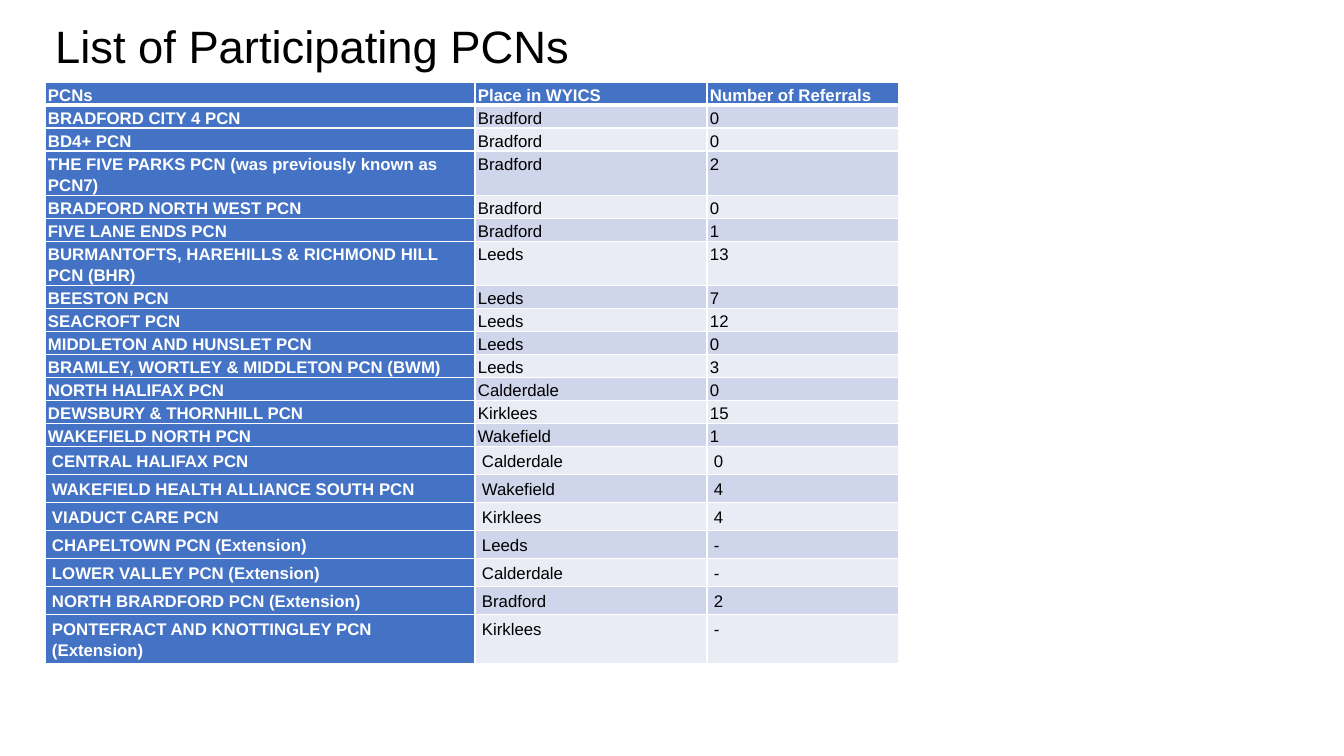
from dataclasses import dataclass

from lxml import etree
from pptx import Presentation
from pptx import util as u
from pptx.dml.color import RGBColor
from pptx.enum import text
from pptx.oxml import ns

EMU_PER_PX = 914400 / 100.8


@dataclass(frozen=True)
class Theme:
    font: str = "Arial"
    ink: str = "000000"
    white: str = "FFFFFF"
    accent: str = "4472C4"
    bands: tuple = ("CFD5EA", "E9EBF5")
    title_size: float = 32.4
    cell_size: int = 12
    thin_line: int = 1
    header_line: int = 3


THEME = Theme()
HEADINGS = ("PCNs", "Place in WYICS", "Number of Referrals")
COMPACT_ROWS = [
    ("BRADFORD CITY 4 PCN", "Bradford", "0"),
    ("BD4+ PCN", "Bradford", "0"),
    ("THE FIVE PARKS PCN (was previously known as PCN7)", "Bradford", "2"),
    ("BRADFORD NORTH WEST PCN", "Bradford", "0"),
    ("FIVE LANE ENDS PCN", "Bradford", "1"),
    ("BURMANTOFTS, HAREHILLS & RICHMOND HILL PCN (BHR)", "Leeds", "13"),
    ("BEESTON PCN", "Leeds", "7"),
    ("SEACROFT PCN", "Leeds", "12"),
    ("MIDDLETON AND HUNSLET PCN", "Leeds", "0"),
    ("BRAMLEY, WORTLEY & MIDDLETON PCN (BWM)", "Leeds", "3"),
    ("NORTH HALIFAX PCN", "Calderdale", "0"),
    ("DEWSBURY & THORNHILL PCN", "Kirklees", "15"),
    ("WAKEFIELD NORTH PCN", "Wakefield", "1"),
]
ROOMY_ROWS = [
    ("CENTRAL HALIFAX PCN", "Calderdale", "0"),
    ("WAKEFIELD HEALTH ALLIANCE SOUTH PCN", "Wakefield", "4"),
    ("VIADUCT CARE PCN", "Kirklees", "4"),
    ("CHAPELTOWN PCN (Extension)", "Leeds", "-"),
    ("LOWER VALLEY PCN (Extension)", "Calderdale", "-"),
    ("NORTH BRARDFORD PCN (Extension)", "Bradford", "2"),
    ("PONTEFRACT AND KNOTTINGLEY PCN (Extension)", "Kirklees", "-"),
]
COLUMN_WIDTHS = (430, 232, 192)
COMPACT_HEIGHT, WRAPPED_HEIGHT, ROOMY_HEIGHT, LAST_HEIGHT = 23, 44, 28, 40
WRAP_LENGTH = 45


def px(length):
    return u.Emu(round(length * EMU_PER_PX))


def style_font(font, size, color, bold=False):
    font.name = THEME.font
    font.size = u.Pt(size)
    font.bold = bold
    font.color.rgb = RGBColor.from_string(color)


def set_title(page, wording):
    title = page.shapes.title
    title.left, title.top, title.width, title.height = map(px, (45, 21, 552, 56))
    frame = title.text_frame
    frame.text = wording
    frame.word_wrap = True
    frame.auto_size = text.MSO_AUTO_SIZE.NONE
    frame.vertical_anchor = text.MSO_ANCHOR.MIDDLE
    para = frame.paragraphs[0]
    para.alignment = text.PP_ALIGN.LEFT
    para.line_spacing = 0.9
    style_font(para.runs[0].font, THEME.title_size, THEME.ink)


def set_borders(cell, row):
    """Rule the cell in white, with a heavier line below the header row."""
    thin, heavy = THEME.thin_line, THEME.header_line
    widths = {"lnL": thin, "lnR": thin,
              "lnT": heavy if row == 1 else thin,
              "lnB": heavy if row == 0 else thin}
    properties = cell._tc.get_or_add_tcPr()
    for position, (side, width) in enumerate(widths.items()):
        line = etree.Element(ns.qn(f"a:{side}"), w=str(u.Pt(width)))
        fill = etree.SubElement(line, ns.qn("a:solidFill"))
        etree.SubElement(fill, ns.qn("a:srgbClr"), val=THEME.white)
        properties.insert(position, line)


def fill_cell(cell, wording, row, column):
    solid = row == 0 or column == 0
    roomy = row > len(COMPACT_ROWS)
    cell.text = wording
    cell.margin_left = cell.margin_right = px(7 if roomy else 3)
    cell.margin_top = px(3 if roomy else 1)
    cell.margin_bottom = px(3 if roomy else 0)
    at_bottom = column == 0 and not roomy
    cell.vertical_anchor = text.MSO_ANCHOR.BOTTOM if at_bottom else text.MSO_ANCHOR.TOP
    cell.fill.solid()
    color = THEME.accent if solid else THEME.bands[(row - 1) % 2]
    cell.fill.fore_color.rgb = RGBColor.from_string(color)
    para = cell.text_frame.paragraphs[0]
    para.line_spacing = 1.15
    para.space_after = u.Pt(3)
    style_font(para.runs[0].font, THEME.cell_size,
               THEME.white if solid else THEME.ink, bold=solid)
    set_borders(cell, row)


def row_heights():
    compact = [WRAPPED_HEIGHT if len(name) > WRAP_LENGTH else COMPACT_HEIGHT
               for name, _, _ in (HEADINGS, *COMPACT_ROWS)]
    return compact + [ROOMY_HEIGHT] * (len(ROOMY_ROWS) - 1) + [LAST_HEIGHT]


def add_referral_table(page):
    records = [HEADINGS, *COMPACT_ROWS, *ROOMY_ROWS]
    heights = row_heights()
    frame = page.shapes.add_table(len(records), len(HEADINGS), px(45), px(82),
                                  px(sum(COLUMN_WIDTHS)), px(sum(heights)))
    table = frame.table
    for column, width in zip(table.columns, COLUMN_WIDTHS):
        column.width = px(width)
    for row, (record, height) in enumerate(zip(records, heights)):
        table.rows[row].height = px(height)
        for column, wording in enumerate(record):
            fill_cell(table.cell(row, column), wording, row, column)


def main():
    deck = Presentation()
    deck.slide_width, deck.slide_height = px(1344), px(756)
    page = deck.slides.add_slide(deck.slide_layouts.get_by_name("Title Only"))
    set_title(page, "List of Participating PCNs")
    add_referral_table(page)
    deck.save("out.pptx")


if __name__ == "__main__":
    main()
